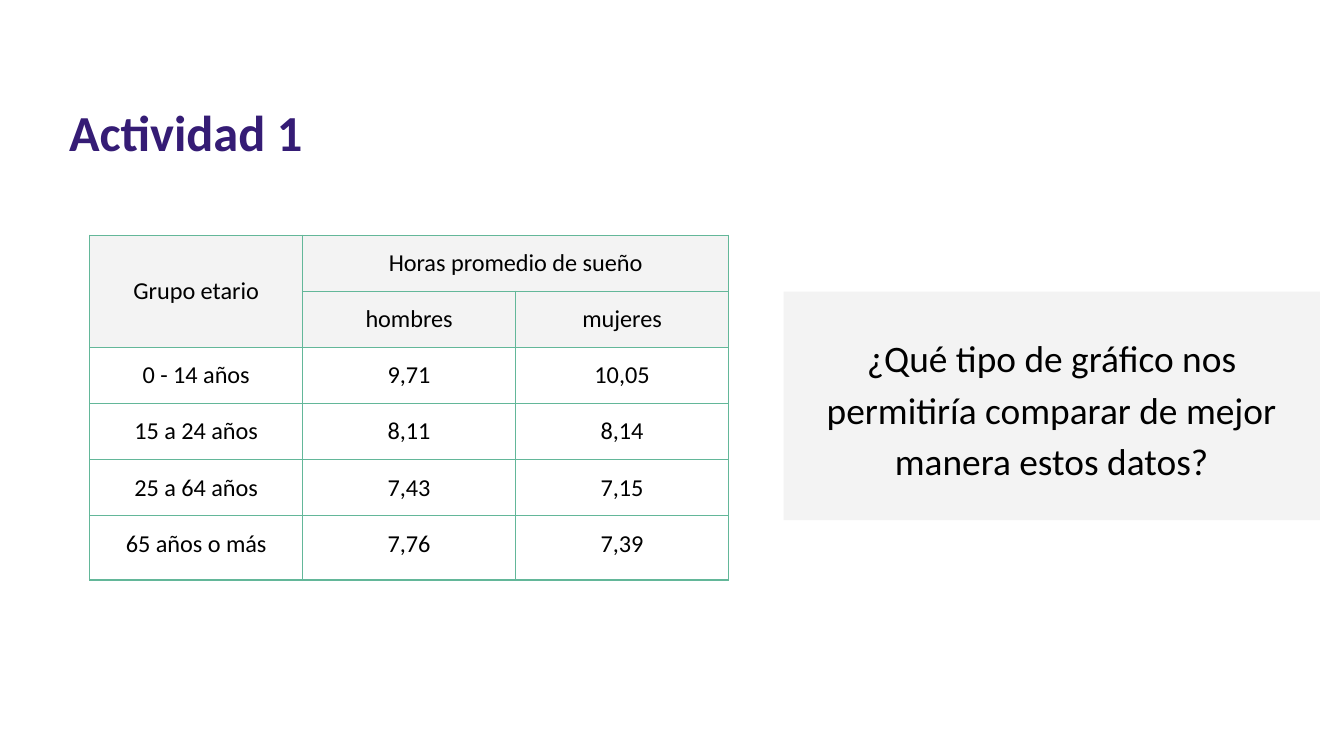
from dataclasses import dataclass

from pptx import Presentation
from pptx.dml.color import RGBColor
from pptx.enum import shapes, text
from pptx.oxml import parse_xml
from pptx.oxml.ns import nsdecls
from pptx.util import Pt


@dataclass(frozen=True)
class Theme:
    font: str = "Calibri"
    title: str = "351C75"
    ink: str = "000000"
    panel: str = "F3F3F3"
    rule: str = "63B799"
    big: float = 27
    mid: float = 20
    small: float = 13
    line: float = 0.75


@dataclass(frozen=True)
class Box:
    left: float
    top: float
    width: float
    height: float

    def pts(self) -> tuple:
        return Pt(self.left), Pt(self.top), Pt(self.width), Pt(self.height)


@dataclass(frozen=True)
class Row:
    cells: tuple
    height: float = 28.8
    head: bool = False


THEME = Theme()
MID = text.MSO_ANCHOR.MIDDLE
TOP = text.MSO_ANCHOR.TOP
COL = 114.12
ROWS = (
    Row(("Grupo etario", "Horas promedio de sueño", ""), head=True),
    Row(("", "hombres", "mujeres"), head=True),
    Row(("0 - 14 años", "9,71", "10,05")),
    Row(("15 a 24 años", "8,11", "8,14")),
    Row(("25 a 64 años", "7,43", "7,15")),
    Row(("65 años o más", "7,76", "7,39"), height=34.5),
)


def write(frame, words: str, *, size: float, color: str = THEME.ink,
          bold: bool = False, center: bool = True, space: float = 1) -> None:
    """Put one formatted paragraph in a text frame."""
    par = frame.paragraphs[0]
    par.alignment = text.PP_ALIGN.CENTER if center else text.PP_ALIGN.LEFT
    par.line_spacing = space
    run = par.add_run()
    run.text = words
    run.font.name = THEME.font
    run.font.size = Pt(size)
    run.font.bold = bold
    run.font.color.rgb = RGBColor.from_string(color)


def inset(item, pad: float) -> None:
    """Give a cell or a text frame equal margins."""
    item.margin_left = item.margin_right = Pt(pad)
    item.margin_top = item.margin_bottom = Pt(pad)


def paint(item, color: str) -> None:
    item.fill.solid()
    item.fill.fore_color.rgb = RGBColor.from_string(color)


def edge(cell) -> None:
    """Rule all four sides; lines go before the fill in the cell XML."""
    props = cell._tc.get_or_add_tcPr()
    for place, side in enumerate(("lnL", "lnR", "lnT", "lnB")):
        props.insert(place, parse_xml(
            f'<a:{side} {nsdecls("a")} w="{Pt(THEME.line)}"><a:solidFill>'
            f'<a:srgbClr val="{THEME.rule}"/></a:solidFill></a:{side}>'))


def draw_table(slide, box: Box, rows: tuple) -> None:
    count = len(rows[0].cells)
    grid = slide.shapes.add_table(len(rows), count, *box.pts()).table
    grid.first_row = grid.horz_banding = False
    for col in grid.columns:
        col.width = Pt(box.width / count)
    for r, row in enumerate(rows):
        grid.rows[r].height = Pt(row.height)
        for c, words in enumerate(row.cells):
            cell = grid.cell(r, c)
            inset(cell, 7.2)
            if row.head:
                paint(cell, THEME.panel)
            else:
                cell.fill.background()
            edge(cell)
            if words:
                write(cell.text_frame, words, size=THEME.small)
    # Header spans
    group = grid.cell(0, 0)
    group.merge(grid.cell(1, 0))
    group.vertical_anchor = MID
    grid.cell(0, 1).merge(grid.cell(0, 2))


def draw_title(slide, box: Box, words: str) -> None:
    frame = slide.shapes.add_textbox(*box.pts()).text_frame
    frame.word_wrap = True
    frame.vertical_anchor = TOP
    inset(frame, 5.04)
    write(frame, words, size=THEME.big, color=THEME.title, bold=True,
          center=False)


def draw_panel(slide, box: Box, words: str) -> None:
    panel = slide.shapes.add_shape(shapes.MSO_SHAPE.RECTANGLE, *box.pts())
    panel.shadow.inherit = False
    paint(panel, THEME.panel)
    panel.line.fill.background()
    frame = panel.text_frame
    frame.word_wrap = True
    frame.vertical_anchor = MID
    inset(frame, 5.04)
    write(frame, words, size=THEME.mid, space=1.15)


def main() -> None:
    deck = Presentation()
    deck.slide_width, deck.slide_height = Pt(720), Pt(405)
    slide = deck.slides.add_slide(deck.slide_layouts[6])

    # Heading
    draw_title(slide, Box(32, 49, 646.5, 44), "Actividad 1")

    # Sleep hours by age group
    height = sum(row.height for row in ROWS)
    draw_table(slide, Box(48, 126, 3 * COL, height), ROWS)

    # Question
    draw_panel(slide, Box(419.76, 156.24, 287.28, 122.4),
               "¿Qué tipo de gráfico nos permitiría comparar de mejor "
               "manera estos datos?")

    deck.save("out.pptx")


if __name__ == "__main__":
    main()
